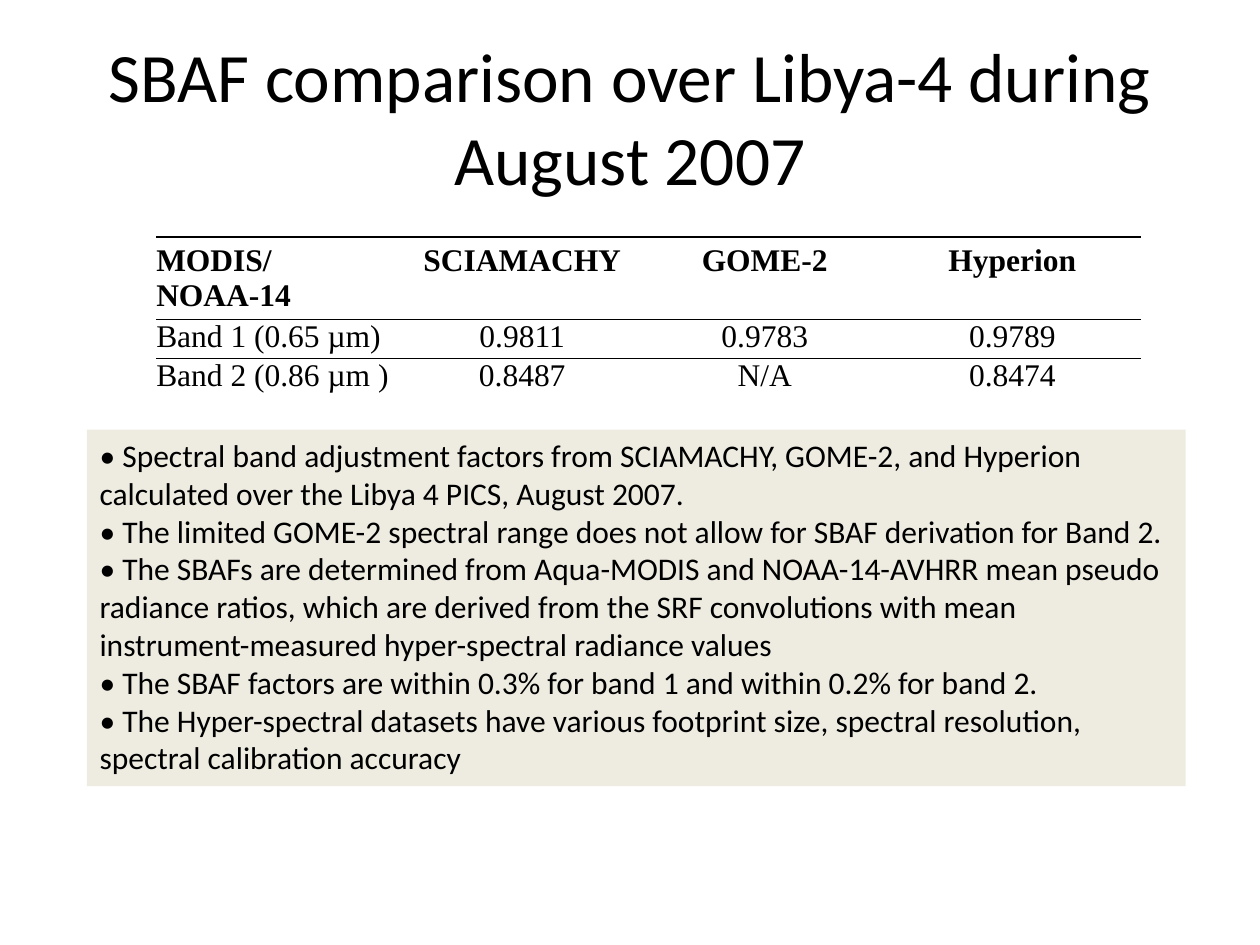
from dataclasses import dataclass

from lxml import etree
from pptx import Presentation
from pptx.dml.color import RGBColor
from pptx.enum.text import MSO_ANCHOR, MSO_AUTO_SIZE, PP_ALIGN
from pptx.oxml.ns import qn
from pptx.util import Pt

LEFT, CENTER = PP_ALIGN.LEFT, PP_ALIGN.CENTER
TOP, MIDDLE = MSO_ANCHOR.TOP, MSO_ANCHOR.MIDDLE
NO_AUTOFIT = MSO_AUTO_SIZE.NONE
PLAIN_TABLE_STYLE = "{2D5ABB26-0587-4C30-8999-92F81FD0307C}"


@dataclass(frozen=True)
class Theme:
    ink: str = "000000"
    paper: str = "FFFFFF"
    panel: str = "EEECE1"
    text_font: str = "Calibri"
    table_font: str = "Times New Roman"
    title_size: float = 39.6
    text_size: float = 18
    rule_width: float = 1


@dataclass(frozen=True)
class Box:
    left: float
    top: float
    width: float
    height: float


@dataclass(frozen=True)
class TableRow:
    labels: tuple[str, ...]
    height: float
    padding: float = 0
    bold: bool = False
    rules: tuple[str, ...] = ()
    filled: bool = False


THEME = Theme()
TITLE = "SBAF comparison over Libya-4 during August 2007"
TITLE_BOX = Box(36, 21.6, 648, 90)
TABLE_BOX = Box(89.28, 135.36, 563.04, 92)
FINDINGS_BOX = Box(49.68, 245.52, 627.84, 203.76)
COLUMN_WIDTHS = (138.24, 141.84, 135.36, 147.6)
ROWS = (
    TableRow(("MODIS/NOAA-14", "SCIAMACHY", "GOME-2", "Hyperion"), 47.2,
             padding=3.6, bold=True, rules=("lnT", "lnB")),
    TableRow(("Band 1 (0.65 µm)", "0.9811", "0.9783", "0.9789"), 22.4, rules=("lnT",)),
    TableRow(("Band 2 (0.86 µm )", "0.8487", "N/A", "0.8474"), 22.4, filled=True),
)
FINDINGS = (
    "Spectral band adjustment factors from SCIAMACHY, GOME-2, and Hyperion "
    "calculated over the Libya 4 PICS, August 2007.",
    "The limited GOME-2 spectral range does not allow for SBAF derivation for Band 2.",
    "The SBAFs are determined from Aqua-MODIS and NOAA-14-AVHRR mean pseudo "
    "radiance ratios, which are derived from the SRF convolutions with mean "
    "instrument-measured hyper-spectral radiance values",
    "The SBAF factors are within 0.3% for band 1 and within 0.2% for band 2.",
    "The Hyper-spectral datasets have various footprint size, spectral resolution, "
    "spectral calibration accuracy",
)


def place(shape, box: Box) -> None:
    shape.left, shape.top = Pt(box.left), Pt(box.top)
    shape.width, shape.height = Pt(box.width), Pt(box.height)


def format_paragraph(para, font: str, size: float, align, bold: bool = False) -> None:
    para.alignment = align
    para.font.name = font
    para.font.size = Pt(size)
    para.font.bold = bold
    para.font.color.rgb = RGBColor.from_string(THEME.ink)


def add_rules(cell, sides: tuple[str, ...]) -> None:
    properties = cell._tc.get_or_add_tcPr()
    for position, side in enumerate(sides):
        line = etree.Element(qn(f"a:{side}"), w=str(Pt(THEME.rule_width)))
        fill = etree.SubElement(line, qn("a:solidFill"))
        etree.SubElement(fill, qn("a:srgbClr"), val=THEME.ink)
        properties.insert(position, line)


def fill_title(shape) -> None:
    place(shape, TITLE_BOX)
    frame = shape.text_frame
    frame.text = TITLE
    frame.auto_size = NO_AUTOFIT
    frame.vertical_anchor = MIDDLE
    format_paragraph(frame.paragraphs[0], THEME.text_font, THEME.title_size, CENTER)


def fill_findings(shape) -> None:
    place(shape, FINDINGS_BOX)
    shape.fill.solid()
    shape.fill.fore_color.rgb = RGBColor.from_string(THEME.panel)
    frame = shape.text_frame
    frame.text = "\n".join(f"• {finding}" for finding in FINDINGS)
    frame.auto_size = NO_AUTOFIT
    frame.vertical_anchor = TOP
    for para in frame.paragraphs:
        format_paragraph(para, THEME.text_font, THEME.text_size, LEFT)
        para.space_before = Pt(0)
        properties = para._p.get_or_add_pPr()
        properties.set("marL", "0")
        properties.set("indent", "0")
        properties.find(qn("a:defRPr")).addprevious(etree.Element(qn("a:buNone")))


def fill_cell(cell, label: str, row: TableRow, align) -> None:
    cell.text = label
    cell.margin_left = cell.margin_right = Pt(0)
    cell.margin_top = cell.margin_bottom = Pt(row.padding)
    cell.vertical_anchor = TOP
    format_paragraph(cell.text_frame.paragraphs[0], THEME.table_font,
                     THEME.text_size, align, row.bold)
    if row.filled:
        cell.fill.solid()
        cell.fill.fore_color.rgb = RGBColor.from_string(THEME.paper)
    else:
        cell.fill.background()
    add_rules(cell, row.rules)


def add_factor_table(page) -> None:
    frame = page.shapes.add_table(
        len(ROWS), len(COLUMN_WIDTHS), Pt(TABLE_BOX.left), Pt(TABLE_BOX.top),
        Pt(TABLE_BOX.width), Pt(TABLE_BOX.height))
    table = frame.table
    table.first_row = table.horz_banding = False
    table._tbl.tblPr.find(qn("a:tableStyleId")).text = PLAIN_TABLE_STYLE
    for column, width in zip(table.columns, COLUMN_WIDTHS):
        column.width = Pt(width)
    for row_index, row in enumerate(ROWS):
        table.rows[row_index].height = Pt(row.height)
        for column_index, label in enumerate(row.labels):
            align = CENTER if column_index else LEFT
            fill_cell(table.cell(row_index, column_index), label, row, align)


def main() -> None:
    deck = Presentation()
    deck.slide_width, deck.slide_height = Pt(720), Pt(540)
    page = deck.slides.add_slide(deck.slide_layouts[1])
    fill_title(page.shapes.title)
    add_factor_table(page)
    fill_findings(page.placeholders[1])
    deck.save("out.pptx")


if __name__ == "__main__":
    main()
